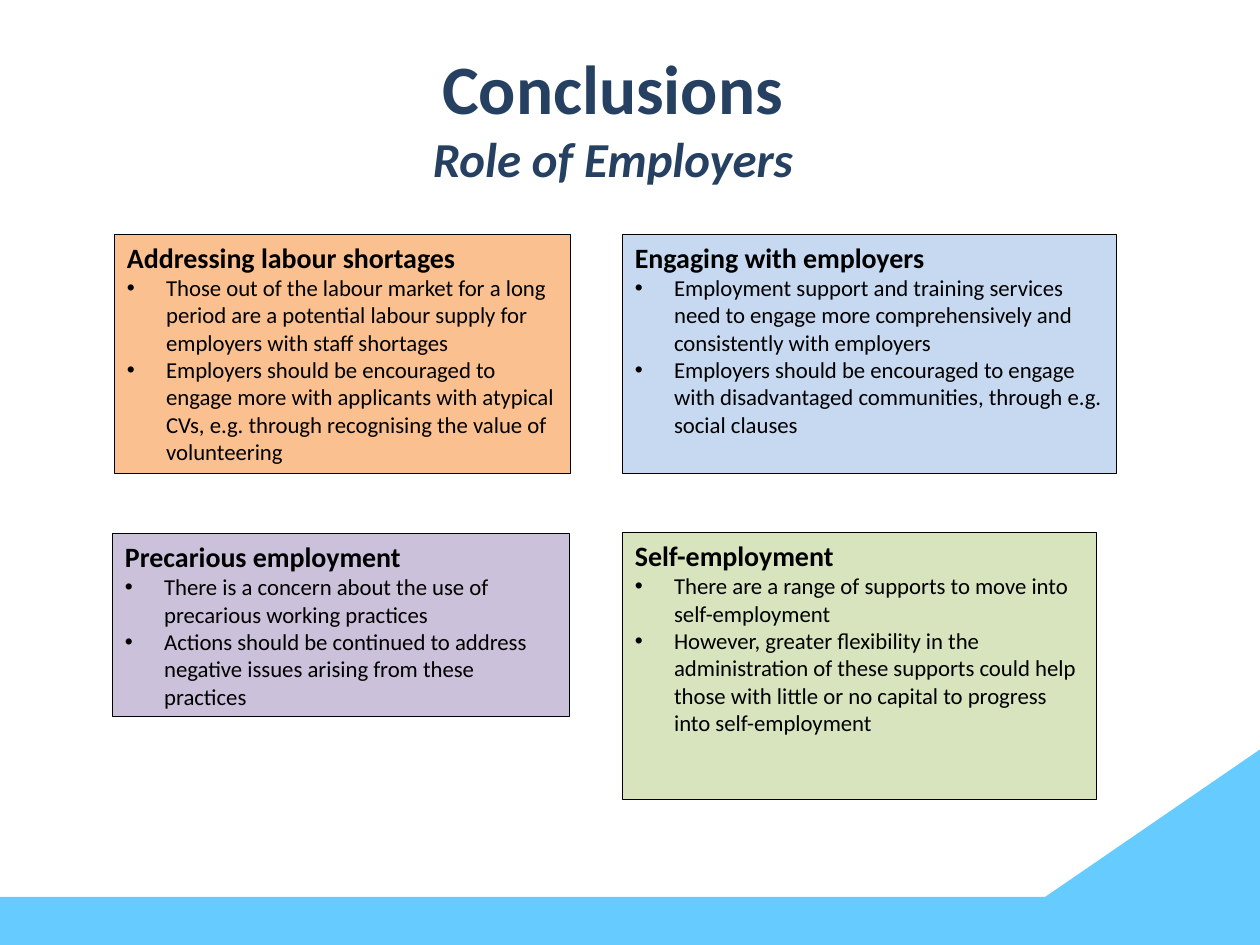
from lxml import etree
from pptx import Presentation
from pptx.dml.color import RGBColor
from pptx.enum.shapes import MSO_SHAPE
from pptx.enum.text import MSO_ANCHOR, PP_ALIGN
from pptx.oxml.ns import qn
from pptx.util import Cm, Pt

RECT, WEDGE = MSO_SHAPE.RECTANGLE, MSO_SHAPE.RIGHT_TRIANGLE
TOP, MIDDLE = MSO_ANCHOR.TOP, MSO_ANCHOR.MIDDLE
LEFT, CENTER = PP_ALIGN.LEFT, PP_ALIGN.CENTER
COLORS = {
    "sky": "66CCFF", "navy": "254061", "black": "000000",
    "orange": "FAC090", "blue": "C6D9F1", "purple": "CCC1DA", "green": "D7E4BD",
}


def add_block(kind, box, color):
    block = slide.shapes.add_shape(kind, *[Cm(n) for n in box])
    block.shadow.inherit = False
    block.fill.solid()
    block.fill.fore_color.rgb = RGBColor.from_string(COLORS[color])
    block.line.fill.background()
    return block


def add_line(frame, index, text, size, color, align, bold=True, italic=False):
    """Write one paragraph of a text frame; index 0 fills the existing one."""
    para = frame.add_paragraph() if index else frame.paragraphs[0]
    para.alignment = align
    run = para.add_run()
    run.text = text
    font = run.font
    font.name, font.size = "Calibri", Pt(size)
    font.bold, font.italic = bold, italic
    font.color.rgb = RGBColor.from_string(COLORS[color])
    return para


deck = Presentation()
deck.slide_width, deck.slide_height = Cm(25.4), Cm(19.05)
slide = deck.slides.add_slide(deck.slide_layouts[6])

# Footer band and corner wedge
add_block(RECT, (0, 18.08, 25.4, 0.97), "sky")
wedge = add_block(WEDGE, (19.66, 15.11, 5.74, 3.94), "sky")
wedge._element.spPr.find(qn("a:xfrm")).set("flipH", "1")

# Title
title = slide.shapes.add_textbox(Cm(1.27), Cm(0.76), Cm(22.86), Cm(3.18)).text_frame
title.word_wrap = True
title.vertical_anchor = MIDDLE
head = add_line(title, 0, "Conclusions", 39.6, "navy", CENTER)
head._p.get_or_add_pPr().set("marR", str(Cm(0.69)))
add_line(title, 1, "Role of Employers", 27.9, "navy", CENTER, italic=True)

# Four theme cards: box, fill, heading, points
cards = [
    ((2.31, 4.72, 9.19, 4.83), "orange", "Addressing labour shortages", [
        "Those out of the labour market for a long period are a potential "
        "labour supply for employers with staff shortages",
        "Employers should be encouraged to engage more with applicants with "
        "atypical CVs, e.g. through recognising the value of volunteering"]),
    ((12.55, 4.72, 9.96, 4.83), "blue", "Engaging with employers", [
        "Employment support and training services need to engage more "
        "comprehensively and consistently with employers",
        "Employers should be encouraged to engage with disadvantaged "
        "communities, through e.g. social clauses"]),
    ((2.27, 10.75, 9.2, 3.7), "purple", "Precarious employment", [
        "There is a concern about the use of precarious working practices",
        "Actions should be continued to address negative issues arising "
        "from these practices"]),
    ((12.55, 10.73, 9.56, 5.38), "green", "Self-employment", [
        "There are a range of supports to move into self-employment",
        "However, greater flexibility in the administration of these supports "
        "could help those with little or no capital to progress into "
        "self-employment"]),
]
for box, color, head, points in cards:
    card = add_block(RECT, box, color)
    card.line.color.rgb = RGBColor.from_string(COLORS["black"])
    card.line.width = Pt(0.25)
    frame = card.text_frame
    frame.word_wrap = True
    frame.vertical_anchor = TOP
    add_line(frame, 0, head, 16, "black", LEFT)
    for index, point in enumerate(points, 1):
        para = add_line(frame, index, point, 13, "black", LEFT, bold=False)
        props = para._p.get_or_add_pPr()
        props.set("marL", str(Cm(0.79)))
        props.set("indent", str(-Cm(0.79)))
        etree.SubElement(props, qn("a:buFont"), typeface="Arial")
        etree.SubElement(props, qn("a:buChar"), char="•")

deck.save("out.pptx")
